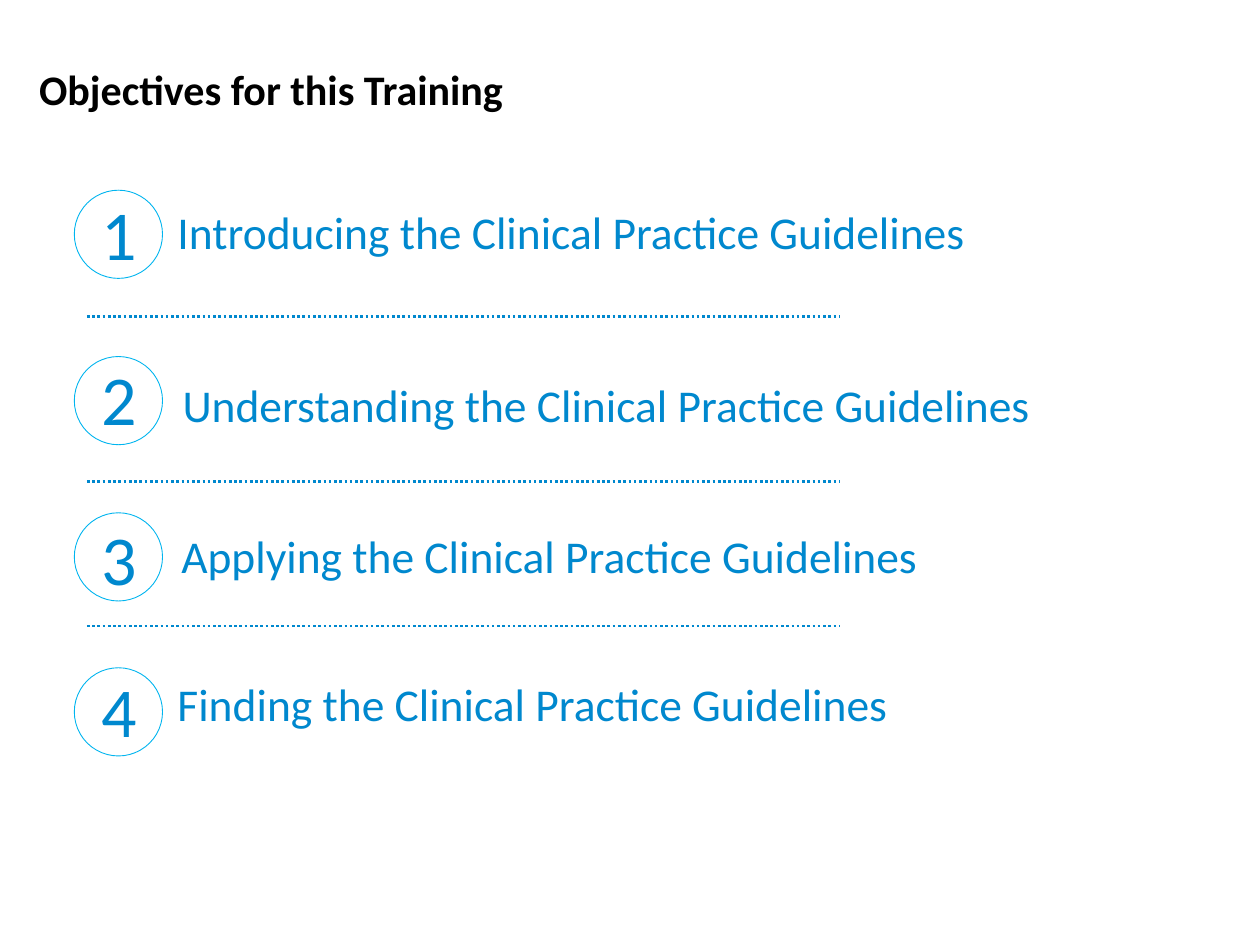
import pptx
import pptx.util
import pptx.dml.color
import pptx.enum.dml
import pptx.enum.shapes
import pptx.enum.text
import pptx.oxml.ns
from lxml import etree

Inches = pptx.util.Inches
Anchor = pptx.enum.text.MSO_ANCHOR
COLORS = {"title": "000000", "text": "0088CE", "ring": "00B5EF"}


class Deck:
    font = "Calibri"

    def __init__(self, slide):
        self.slide = slide

    def color(self, name):
        return pptx.dml.color.RGBColor.from_string(COLORS[name])

    def fill_text(self, frame, text, size, color, anchor, bold=False):
        frame.word_wrap = True
        frame.vertical_anchor = anchor
        para = frame.paragraphs[0]
        run = para.add_run()
        run.text = text
        run.font.name = self.font
        run.font.size = pptx.util.Pt(size)
        run.font.bold = bold
        run.font.color.rgb = self.color(color)
        return para

    def title(self, text, left, top, width, height):
        shape = self.slide.shapes.title
        shape.left, shape.top = Inches(left), Inches(top)
        shape.width, shape.height = Inches(width), Inches(height)
        para = self.fill_text(
            shape.text_frame, text, 24, "title", Anchor.TOP, True)
        para.alignment = pptx.enum.text.PP_ALIGN.LEFT
        para.line_spacing = 0.9

    def label(self, text, left, top, width, height, size, anchor):
        box = self.slide.shapes.add_textbox(
            Inches(left), Inches(top), Inches(width), Inches(height))
        self.fill_text(box.text_frame, text, size, "text", anchor)

    def ring(self, left, top, size):
        shape = self.slide.shapes.add_shape(
            pptx.enum.shapes.MSO_SHAPE.OVAL,
            Inches(left), Inches(top), Inches(size), Inches(size))
        shape.shadow.inherit = False
        shape.fill.background()
        shape.line.color.rgb = self.color("ring")
        shape.line.width = pptx.util.Pt(0.5)

    def rule(self, left, right, top):
        line = self.slide.shapes.add_connector(
            pptx.enum.shapes.MSO_CONNECTOR.STRAIGHT,
            Inches(left), Inches(top), Inches(right), Inches(top))
        line.line.color.rgb = self.color("text")
        line.line.width = pptx.util.Pt(1.5)
        line.line.dash_style = pptx.enum.dml.MSO_LINE.ROUND_DOT
        props = line._element.spPr
        etree.SubElement(props, pptx.oxml.ns.qn("a:effectLst"))


def main():
    prs = pptx.Presentation()
    prs.slide_width, prs.slide_height = Inches(10), Inches(7.5)
    deck = Deck(prs.slides.add_slide(prs.slide_layouts[5]))

    # Heading
    deck.title("Objectives for this Training", 0.21, 0.5, 8.27, 0.94)

    # Objectives: verb, ring top, number top, text left, text top
    goals = [
        ("Introducing", 1.51, 1.46, 1.31, 1.54),
        ("Understanding", 2.83, 2.77, 1.35, 2.91),
        ("Applying", 4.07, 4.04, 1.34, 4.11),
        ("Finding", 5.3, 5.25, 1.31, 5.29),
    ]
    for num, (verb, ring, digit, left, top) in enumerate(goals, 1):
        deck.ring(0.59, ring, 0.7)
        deck.label(str(num), 0.71, digit, 0.61, 0.77, 40, Anchor.TOP)
        deck.label(f"{verb} the Clinical Practice Guidelines",
                   left, top, 7.15, 0.59, 26, Anchor.MIDDLE)

    # Dotted rules between objectives
    for top in (2.51, 3.82, 4.97):
        deck.rule(0.69, 6.66, top)

    prs.save("out.pptx")


if __name__ == "__main__":
    main()
